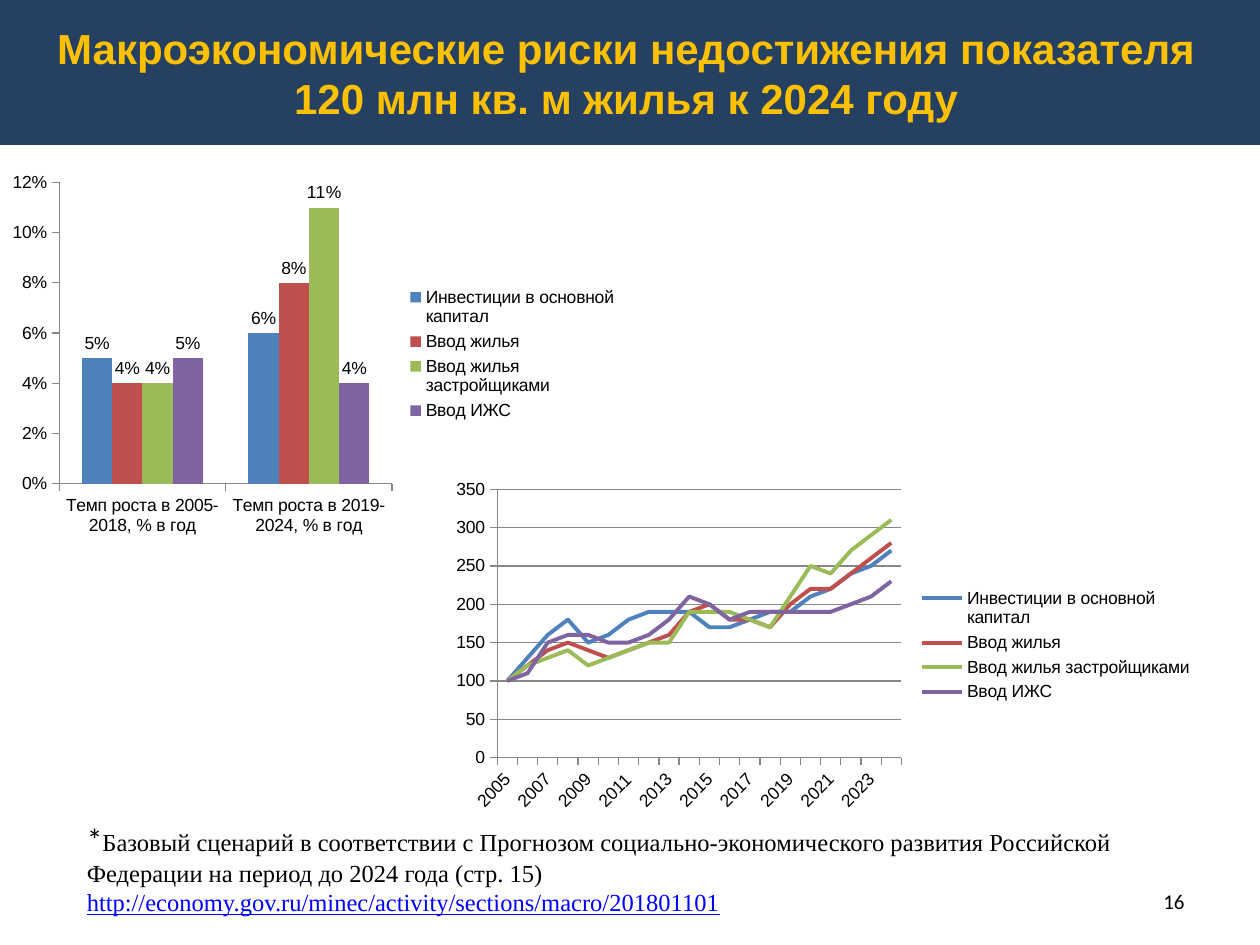
from pptx import Presentation
from pptx import util as u
from pptx.chart.data import CategoryChartData
from pptx.dml.color import RGBColor
from pptx.enum import chart as ch, shapes, text

NAMES = ["Инвестиции в основной капитал", "Ввод жилья",
         "Ввод жилья застройщиками", "Ввод ИЖС"]
HUES = ["4F81BD", "C0504D", "9BBB59", "8064A2"]
RATES = [(0.05, 0.06), (0.04, 0.08), (0.04, 0.11), (0.05, 0.04)]
PERIODS = ["Темп роста в 2005-2018, % в год",
           "Темп роста в 2019-2024, % в год"]
YEARS = [str(year) for year in range(2005, 2025)]
LEVELS = [
    (100, 130, 160, 180, 150, 160, 180, 190, 190, 190,
     170, 170, 180, 190, 190, 210, 220, 240, 250, 270),
    (100, 120, 140, 150, 140, 130, 140, 150, 160, 190,
     200, 180, 180, 170, 200, 220, 220, 240, 260, 280),
    (100, 120, 130, 140, 120, 130, 140, 150, 150, 190,
     190, 190, 180, 170, 210, 250, 240, 270, 290, 310),
    (100, 110, 150, 160, 160, 150, 150, 160, 180, 210,
     200, 180, 190, 190, 190, 190, 190, 200, 210, 230),
]
GREY = "878787"


def color(code):
    return RGBColor.from_string(code)


def box(*sides):
    return [u.Pt(side) for side in sides]


class Deck:
    face = "Arial"
    ink = "000000"

    def __init__(self, width, height):
        self.file = Presentation()
        self.file.slide_width, self.file.slide_height = box(width, height)
        self.slide = self.file.slides.add_slide(self.file.slide_layouts[5])

    def style(self, font, size, face=None, hue=None, bold=False):
        font.size = u.Pt(size)
        font.name = face or self.face
        font.bold = bold
        font.color.rgb = color(hue or self.ink)

    def band(self, place, hue):
        """Add a plain filled bar behind the title."""
        bar = self.slide.shapes.add_shape(
            shapes.MSO_SHAPE.RECTANGLE, *box(*place))
        bar.shadow.inherit = False
        bar.fill.solid()
        bar.fill.fore_color.rgb = color(hue)
        bar.line.fill.background()
        self.slide.shapes.title.element.addprevious(bar.element)

    def title(self, place, words, hue):
        head = self.slide.shapes.title
        head.left, head.top, head.width, head.height = box(*place)
        frame = head.text_frame
        frame.text = words
        frame.word_wrap = True
        frame.vertical_anchor = text.MSO_ANCHOR.MIDDLE
        para = frame.paragraphs[0]
        para.alignment = text.PP_ALIGN.CENTER
        self.style(para.font, 24, hue=hue, bold=True)

    def note(self, place, anchor=text.MSO_ANCHOR.TOP):
        """Add an empty wrapping text box and return its frame."""
        frame = self.slide.shapes.add_textbox(*box(*place)).text_frame
        frame.word_wrap = True
        frame.vertical_anchor = anchor
        return frame

    def chart(self, kind, place, cats, rows, top, step, form):
        data = CategoryChartData(number_format=form)
        data.categories = cats
        for name, row in zip(NAMES, rows):
            data.add_series(name, row)
        chart = self.slide.shapes.add_chart(kind, *box(*place), data).chart
        self.style(chart.font, 10)
        chart.has_title = False
        chart.has_legend = True
        chart.legend.position = ch.XL_LEGEND_POSITION.RIGHT
        chart.legend.include_in_layout = False
        for axis in (chart.category_axis, chart.value_axis):
            axis.has_major_gridlines = False
            axis.major_tick_mark = ch.XL_TICK_MARK.OUTSIDE
            axis.format.line.color.rgb = color(GREY)
        scale = chart.value_axis
        scale.minimum_scale, scale.maximum_scale = 0, top
        scale.major_unit = step
        scale.tick_labels.number_format = form
        scale.tick_labels.number_format_is_linked = False
        return chart

    def bars(self, place, cats, rows):
        chart = self.chart(ch.XL_CHART_TYPE.COLUMN_CLUSTERED, place,
                           cats, rows, 0.12, 0.02, "0%")
        plot = chart.plots[0]
        plot.vary_by_categories = False
        plot.gap_width = 150
        plot.overlap = 0
        for series, hue in zip(plot.series, HUES):
            series.format.fill.solid()
            series.format.fill.fore_color.rgb = color(hue)
            labels = series.data_labels
            labels.show_value = True
            labels.position = ch.XL_LABEL_POSITION.OUTSIDE_END
            labels.number_format = "0%"
            labels.number_format_is_linked = False

    def lines(self, place, cats, rows):
        chart = self.chart(ch.XL_CHART_TYPE.LINE, place,
                           cats, rows, 350, 50, "0")
        grid = chart.value_axis.major_gridlines
        grid.format.line.color.rgb = color(GREY)
        chart.plots[0].vary_by_categories = False
        for series, hue in zip(chart.plots[0].series, HUES):
            series.smooth = False
            series.marker.style = ch.XL_MARKER_STYLE.NONE
            series.format.line.color.rgb = color(hue)
            series.format.line.width = u.Pt(2.25)


def main():
    deck = Deck(720, 540)
    deck.band((0, 0, 720, 82.8), "254061")
    deck.title((14.4, 0, 686.9, 82.8),
               "Макроэкономические риски недостижения показателя "
               "120 млн кв. м жилья к 2024 году", "FFC000")

    page = deck.note((516, 500.5, 168, 28.8), text.MSO_ANCHOR.MIDDLE)
    page.text = "16"
    page.paragraphs[0].alignment = text.PP_ALIGN.RIGHT
    deck.style(page.paragraphs[0].font, 12, "Calibri")

    source = deck.note((42.5, 465.1, 639.4, 63.4))
    source.auto_size = text.MSO_AUTO_SIZE.SHAPE_TO_FIT_TEXT
    para = source.paragraphs[0]
    star, body = para.add_run(), para.add_run()
    star.text = "*"
    deck.style(star.font, 18, "Calibri")
    body.text = ("Базовый сценарий в соответствии с Прогнозом "
                 "социально-экономического развития Российской Федерации "
                 "на период до 2024 года (стр. 15)")
    deck.style(body.font, 14, "Times New Roman")
    link = source.add_paragraph()
    link.text = "http://economy.gov.ru/minec/activity/sections/macro/201801101"
    deck.style(link.font, 14, "Times New Roman", "0000FF")
    link.font.underline = True

    deck.lines((252, 270, 437, 197.3), YEARS, LEVELS)
    deck.bars((0, 94.3, 360, 216), PERIODS, RATES)
    deck.file.save("out.pptx")


if __name__ == "__main__":
    main()
